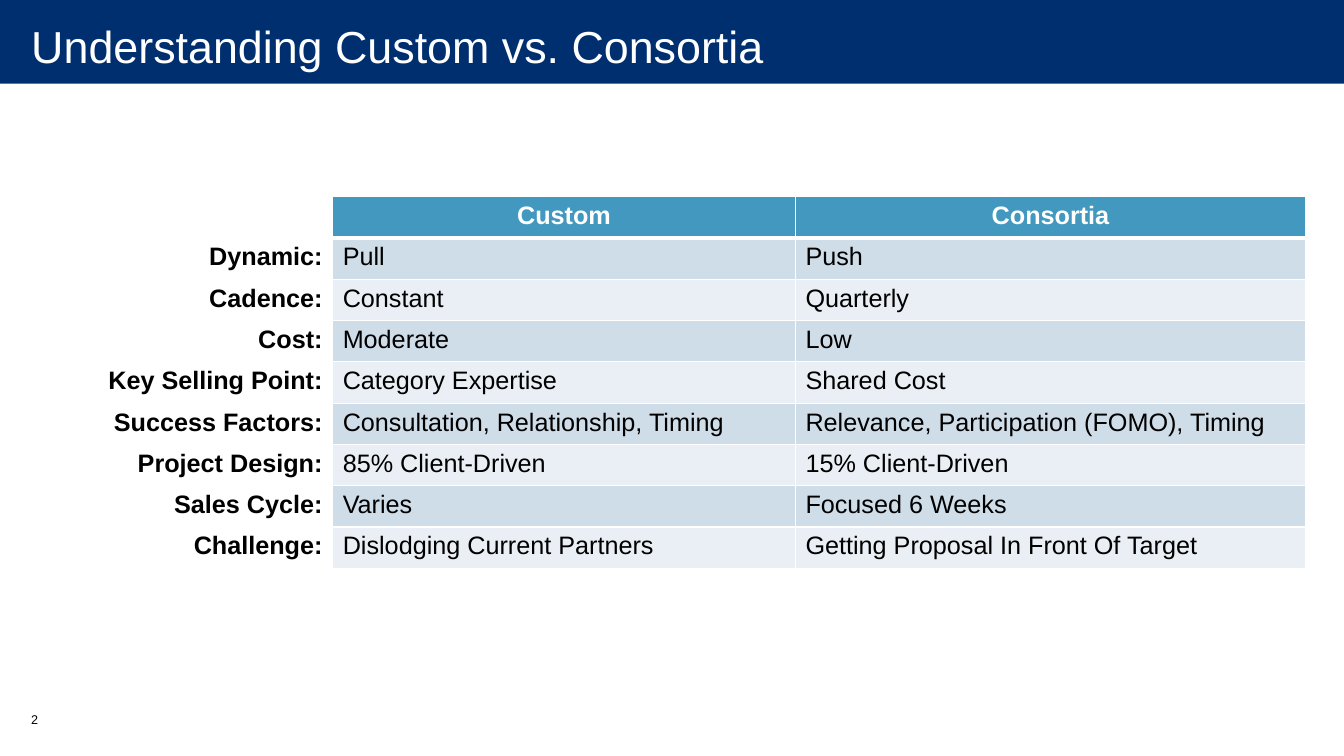
from typing import NamedTuple

from lxml import etree
from pptx import Presentation
from pptx.dml.color import RGBColor
from pptx.enum.shapes import MSO_SHAPE
from pptx.enum.text import MSO_ANCHOR, MSO_AUTO_SIZE, PP_ALIGN
from pptx.oxml.ns import qn
from pptx.util import Inches, Pt

RECTANGLE = MSO_SHAPE.RECTANGLE
LEFT, CENTER, RIGHT = PP_ALIGN.LEFT, PP_ALIGN.CENTER, PP_ALIGN.RIGHT
MIDDLE = MSO_ANCHOR.MIDDLE
NO_AUTOFIT = MSO_AUTO_SIZE.NONE

FONT = "Arial"
COLORS = {
    "navy": "002F70",
    "header": "4298BE",
    "dark_band": "CFDDE8",
    "light_band": "E9EFF4",
    "white": "FFFFFF",
    "black": "000000",
}
COLUMN_WIDTHS = (2.84, 4.59, 5.06)
ROW_HEIGHT = 0.41


class Comparison(NamedTuple):
    label: str
    custom: str
    consortia: str


class CellStyle(NamedTuple):
    fill: str
    color: str
    bold: bool
    alignment: PP_ALIGN


COMPARISONS = (
    Comparison("", "Custom", "Consortia"),
    Comparison("Dynamic:", "Pull", "Push"),
    Comparison("Cadence:", "Constant", "Quarterly"),
    Comparison("Cost:", "Moderate", "Low"),
    Comparison("Key Selling Point:", "Category Expertise", "Shared Cost"),
    Comparison("Success Factors:", "Consultation, Relationship, Timing",
               "Relevance, Participation (FOMO), Timing"),
    Comparison("Project Design:", "85% Client-Driven", "15% Client-Driven"),
    Comparison("Sales Cycle:", "Varies", "Focused 6 Weeks"),
    Comparison("Challenge:", "Dislodging Current Partners",
               "Getting Proposal In Front Of Target"),
)


def rgb(name: str) -> RGBColor:
    return RGBColor.from_string(COLORS[name])


def add_run(paragraph, text: str, size: float, color: str, bold: bool = False) -> None:
    run = paragraph.add_run()
    run.text = text
    run.font.name = FONT
    run.font.size = Pt(size)
    run.font.bold = bold
    run.font.color.rgb = rgb(color)


def set_borders(cell, top: float, bottom: float) -> None:
    """Draw white cell borders; the side borders are always 1 pt."""
    properties = cell._tc.get_or_add_tcPr()
    for tag, width in (("a:lnL", 1), ("a:lnR", 1), ("a:lnT", top), ("a:lnB", bottom)):
        line = etree.SubElement(properties, qn(tag), w=str(Pt(width)))
        fill = etree.SubElement(line, qn("a:solidFill"))
        etree.SubElement(fill, qn("a:srgbClr"), val=COLORS["white"])


def cell_style(row: int, column: int) -> CellStyle:
    if column == 0:
        return CellStyle("white", "black", True, RIGHT)
    if row == 0:
        return CellStyle("header", "white", True, CENTER)
    return CellStyle("dark_band" if row % 2 else "light_band", "black", False, LEFT)


def add_title(slide) -> None:
    band = slide.shapes.add_shape(
        RECTANGLE, Inches(0), Inches(-0.03), Inches(13.33), Inches(0.86))
    band.shadow.inherit = False
    band.fill.solid()
    band.fill.fore_color.rgb = rgb("navy")
    band.line.fill.background()

    title = slide.shapes.title
    band.element.addnext(title.element)
    title.left, title.top = Inches(0.01), Inches(-0.03)
    title.width, title.height = Inches(13.33), Inches(0.97)
    frame = title.text_frame
    frame.auto_size = NO_AUTOFIT
    frame.word_wrap = True
    frame.vertical_anchor = MIDDLE
    frame.margin_left, frame.margin_right = Inches(0.3), Inches(0.2)
    frame.margin_top = frame.margin_bottom = Inches(0)
    paragraph = frame.paragraphs[0]
    paragraph.alignment = LEFT
    add_run(paragraph, "Understanding Custom vs. Consortia", 32, "white")


def add_page_number(slide) -> None:
    box = slide.shapes.add_textbox(
        Inches(0.21), Inches(7.01), Inches(0.49), Inches(0.4))
    box.text_frame.word_wrap = True
    add_run(box.text_frame.paragraphs[0], "2", 9, "black")


def add_comparison_table(slide) -> None:
    table = slide.shapes.add_table(
        len(COMPARISONS), len(COLUMN_WIDTHS), Inches(0.46), Inches(1.95),
        Inches(sum(COLUMN_WIDTHS)), Inches(ROW_HEIGHT * len(COMPARISONS))).table
    for column, width in zip(table.columns, COLUMN_WIDTHS):
        column.width = Inches(width)
    for row_index, comparison in enumerate(COMPARISONS):
        table.rows[row_index].height = Inches(ROW_HEIGHT)
        for column_index, text in enumerate(comparison):
            cell = table.cell(row_index, column_index)
            style = cell_style(row_index, column_index)
            set_borders(cell, top=3 if row_index == 1 else 1,
                        bottom=3 if row_index == 0 else 1)
            cell.fill.solid()
            cell.fill.fore_color.rgb = rgb(style.fill)
            paragraph = cell.text_frame.paragraphs[0]
            paragraph.alignment = style.alignment
            if text:
                add_run(paragraph, text, 18, style.color, style.bold)


def main() -> None:
    presentation = Presentation()
    presentation.slide_width = Inches(13.33)
    presentation.slide_height = Inches(7.5)
    slide = presentation.slides.add_slide(presentation.slide_layouts[5])
    add_title(slide)
    add_page_number(slide)
    add_comparison_table(slide)
    presentation.save("out.pptx")


if __name__ == "__main__":
    main()
